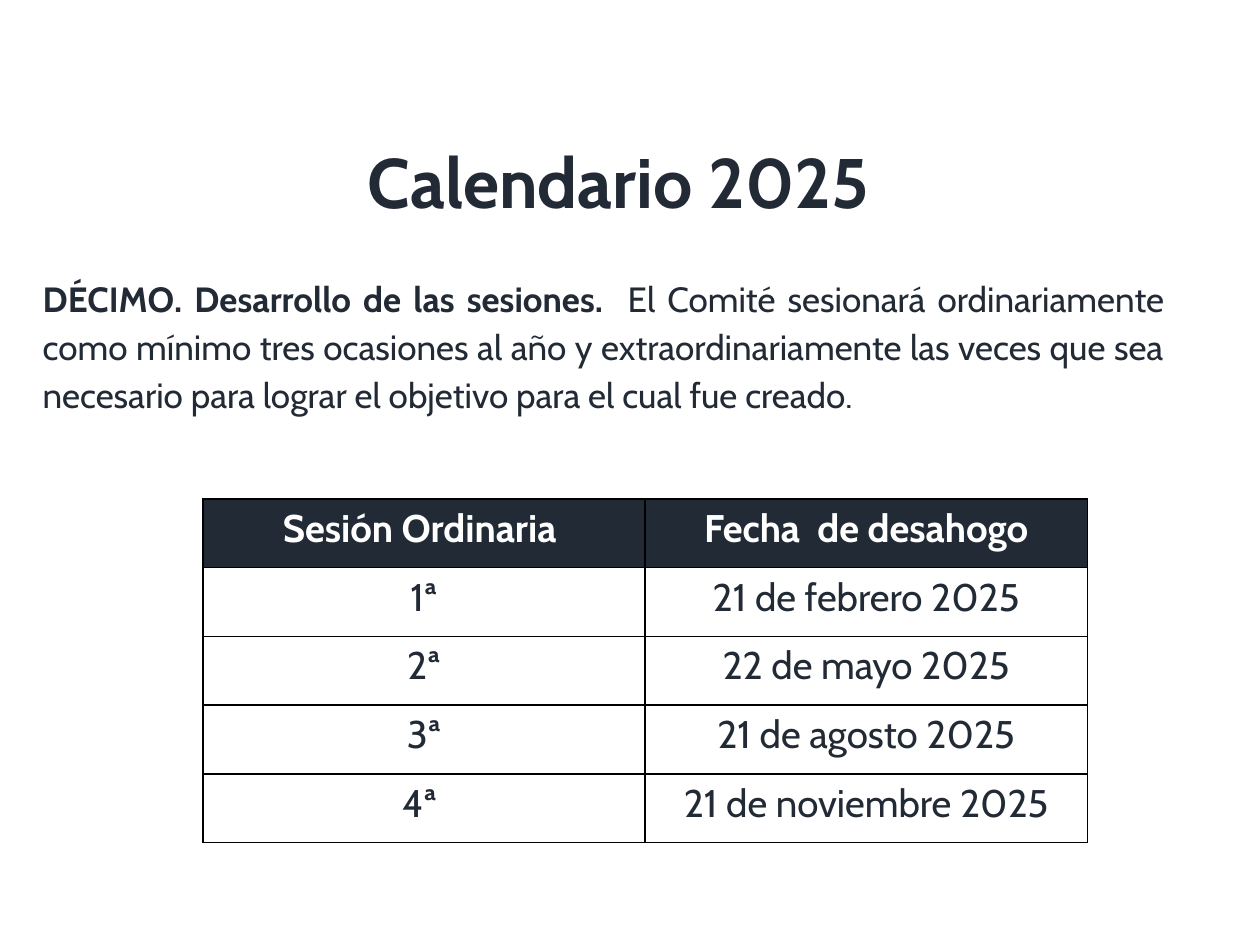
"""Build the 2025 session calendar slide."""
from dataclasses import dataclass

import pptx
import pptx.dml.color
import pptx.enum.text
import pptx.oxml
import pptx.oxml.ns
import pptx.util

ALIGN = pptx.enum.text.PP_ALIGN
ANCHOR = pptx.enum.text.MSO_ANCHOR


@dataclass(frozen=True)
class Theme:
    """Colours, font and type sizes."""
    font: str = "Cabin"
    ink: str = "222A35"
    paper: str = "FFFFFF"
    rule: str = "000000"
    title: int = 40
    body: int = 20
    cell: int = 22


def rgb(code):
    """Turn a hex code into a colour."""
    return pptx.dml.color.RGBColor.from_string(code)


def write(para, text, font, size, color, bold=False, align=ALIGN.CENTER, lead=None):
    """Add formatted text to a paragraph."""
    para.alignment = align
    if lead:
        para.line_spacing = lead
    run = para.add_run()
    run.text = text
    run.font.name = font
    run.font.size = pptx.util.Pt(size)
    run.font.bold = bold
    run.font.color.rgb = rgb(color)


def border(cell, color, width=1):
    """Draw all four edges of a cell."""
    props = cell._tc.get_or_add_tcPr()
    space = pptx.oxml.ns.nsdecls("a")
    for spot, side in enumerate("LRTB"):
        props.insert(spot, pptx.oxml.parse_xml(
            f'<a:ln{side} {space} w="{pptx.util.Pt(width)}"><a:solidFill>'
            f'<a:srgbClr val="{color}"/></a:solidFill></a:ln{side}>'))


class Page:
    """Hold the style and the current slide."""

    def __init__(self, deck, theme):
        """Add a blank slide to the deck."""
        self.theme = theme
        self.size = deck.slide_width, deck.slide_height
        self.slide = deck.slides.add_slide(deck.slide_layouts[6])

    def place(self, *box):
        """Turn shares of the slide into lengths."""
        return [round(part * self.size[i % 2]) for i, part in enumerate(box)]

    def text(self, box, parts, size, anchor=ANCHOR.TOP, **form):
        """Add a text box of one paragraph from (text, bold) parts."""
        frame = self.slide.shapes.add_textbox(*self.place(*box)).text_frame
        frame.word_wrap = True
        frame.vertical_anchor = anchor
        for words, bold in parts:
            write(frame.paragraphs[0], words, self.theme.font, size,
                  self.theme.ink, bold=bold, **form)

    def table(self, box, rows):
        """Add a ruled table with a dark header row."""
        look = self.theme
        grid = self.slide.shapes.add_table(
            len(rows), len(rows[0]), *self.place(*box)).table
        grid.horz_banding = False
        for r, row in enumerate(rows):
            head = r == 0
            for c, words in enumerate(row):
                cell = grid.cell(r, c)
                cell.fill.solid()
                cell.fill.fore_color.rgb = rgb(look.ink if head else look.paper)
                border(cell, look.rule)
                write(cell.text_frame.paragraphs[0], words, look.font, look.cell,
                      look.paper if head else look.ink, bold=head)


def main():
    """Build and save the slide."""
    deck = pptx.Presentation()
    deck.slide_width = pptx.util.Inches(10)
    deck.slide_height = pptx.util.Inches(7.5)
    theme = Theme()
    page = Page(deck, theme)
    page.text((0.066, 0.023, 0.85, 0.348), [("Calendario 2025", True)],
              theme.title, anchor=ANCHOR.MIDDLE, lead=0.9)
    page.text((0.024, 0.28, 0.91, 0.22), [
        ("DÉCIMO. Desarrollo de las sesiones.  ", True),
        ("El Comité sesionará ordinariamente como mínimo tres ocasiones al año y "
         "extraordinariamente las veces que sea necesario para lograr el objetivo "
         "para el cual fue creado.", False),
    ], theme.body, align=ALIGN.JUSTIFY, lead=1.15)
    page.table((0.161, 0.528, 0.702, 0.364), [
        ("Sesión Ordinaria ", "Fecha  de desahogo"),
        ("1ª", "21 de febrero 2025"),
        ("2ª", "22 de mayo 2025"),
        ("3ª", "21 de agosto 2025"),
        ("4ª ", "21 de noviembre 2025"),
    ])
    deck.save("out.pptx")


if __name__ == "__main__":
    main()
